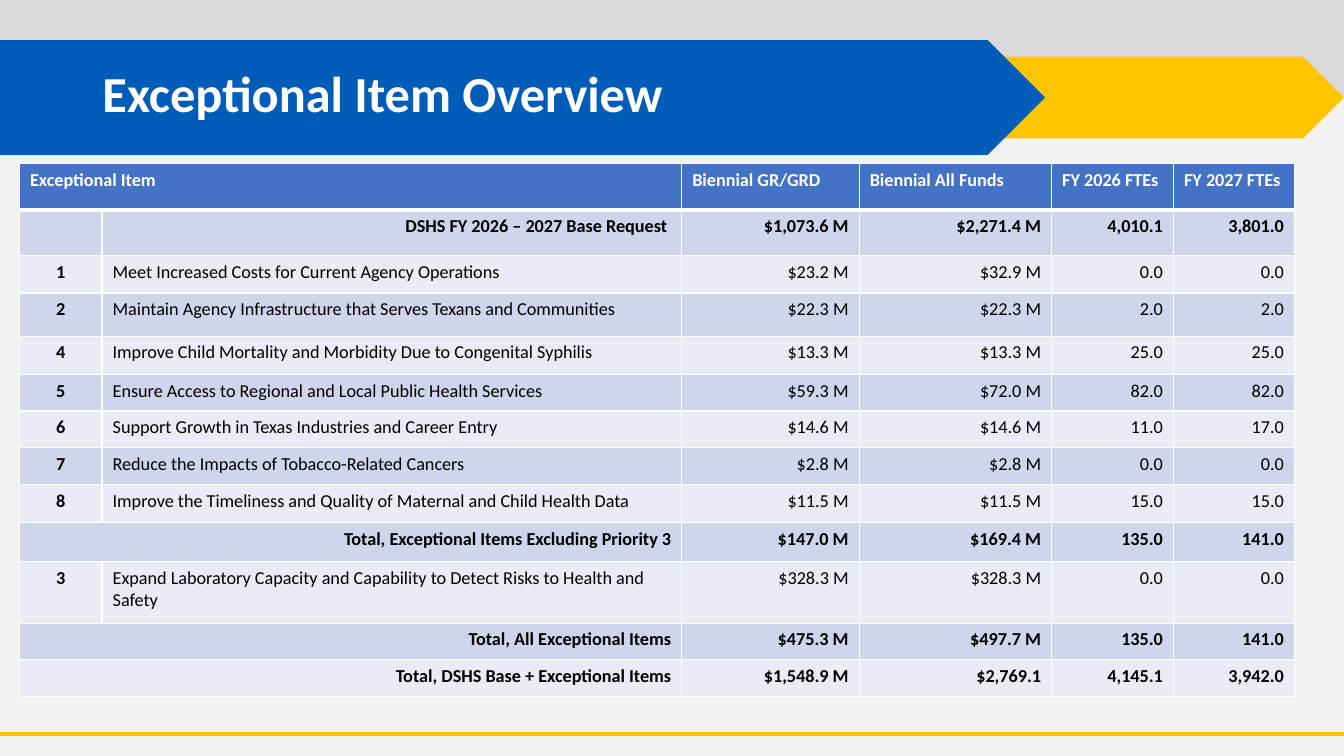
from lxml import etree
from pptx import Presentation
from pptx.dml.color import RGBColor
from pptx.enum.shapes import MSO_CONNECTOR, MSO_SHAPE
from pptx.enum.text import MSO_ANCHOR, MSO_AUTO_SIZE, PP_ALIGN
from pptx.oxml.ns import qn
from pptx.util import Pt

LEFT, CENTER, RIGHT = PP_ALIGN.LEFT, PP_ALIGN.CENTER, PP_ALIGN.RIGHT
MIDDLE = MSO_ANCHOR.MIDDLE
NO_AUTOFIT = MSO_AUTO_SIZE.NONE
RECTANGLE, ARROW_BAND = MSO_SHAPE.RECTANGLE, MSO_SHAPE.PENTAGON
STRAIGHT = MSO_CONNECTOR.STRAIGHT

WHITE = RGBColor(0xFF, 0xFF, 0xFF)
BLACK = RGBColor(0x00, 0x00, 0x00)
PAGE_GREY = RGBColor(0xF2, 0xF2, 0xF2)
BAND_GREY = RGBColor(0xD9, 0xD9, 0xD9)
YELLOW = RGBColor(0xFF, 0xC6, 0x00)
BLUE = RGBColor(0x00, 0x5C, 0xB9)
HEADER_BLUE = RGBColor(0x44, 0x72, 0xC4)
STRIPES = (RGBColor(0xCF, 0xD5, 0xEA), RGBColor(0xE9, 0xEB, 0xF5))

FONT = "Calibri"
SLIDE_WIDTH, SLIDE_HEIGHT = 960, 540
TITLE_ONLY = 5
THIN, THICK = 1, 3

COLUMN_WIDTHS = (59, 414, 126.8, 137.5, 87.1, 86.4)
ROW_HEIGHTS = (33, 33, 26.5, 31, 27.2, 26.2, 26.2, 26.2, 27.2, 28, 44, 26.2, 26.2)

HEADER = ("Exceptional Item", "", "Biennial GR/GRD", "Biennial All Funds",
          "FY 2026 FTEs", "FY 2027 FTEs")
BASE = ("", "DSHS FY 2026 – 2027 Base Request ", "$1,073.6 M", "$2,271.4 M",
        "4,010.1", "3,801.0")
ITEMS = (
    ("1", "Meet Increased Costs for Current Agency Operations",
     "$23.2 M", "$32.9 M", "0.0", "0.0"),
    ("2", "Maintain Agency Infrastructure that Serves Texans and Communities",
     "$22.3 M", "$22.3 M", "2.0", "2.0"),
    ("4", "Improve Child Mortality and Morbidity Due to Congenital Syphilis",
     "$13.3 M", "$13.3 M", "25.0", "25.0"),
    ("5", "Ensure Access to Regional and Local Public Health Services",
     "$59.3 M", "$72.0 M", "82.0", "82.0"),
    ("6", "Support Growth in Texas Industries and Career Entry",
     "$14.6 M", "$14.6 M", "11.0", "17.0"),
    ("7", "Reduce the Impacts of Tobacco-Related Cancers",
     "$2.8 M", "$2.8 M", "0.0", "0.0"),
    ("8", "Improve the Timeliness and Quality of Maternal and Child Health Data",
     "$11.5 M", "$11.5 M", "15.0", "15.0"),
)
SUBTOTAL = ("Total, Exceptional Items Excluding Priority 3", "",
            "$147.0 M", "$169.4 M", "135.0", "141.0")
LABORATORY = ("3", "Expand Laboratory Capacity and Capability to Detect Risks to "
              "Health and Safety", "$328.3 M", "$328.3 M", "0.0", "0.0")
ALL_ITEMS = ("Total, All Exceptional Items", "",
             "$475.3 M", "$497.7 M", "135.0", "141.0")
GRAND_TOTAL = ("Total, DSHS Base + Exceptional Items", "",
               "$1,548.9 M", "$2,769.1", "4,145.1", "3,942.0")
ROWS = (HEADER, BASE, *ITEMS, SUBTOTAL, LABORATORY, ALL_ITEMS, GRAND_TOTAL)
MERGED = (HEADER, SUBTOTAL, ALL_ITEMS, GRAND_TOTAL)
BOLD = (BASE, *MERGED)


def apply(target, settings):
    for name, value in settings.items():
        setattr(target, name, value)


def format_font(font, size, color, bold):
    apply(font, {"name": FONT, "size": Pt(size), "bold": bold})
    font.color.rgb = color


def add_band(slide, preset, color, *box):
    band = slide.shapes.add_shape(preset, *map(Pt, box))
    band.shadow.inherit = False
    band.fill.solid()
    band.fill.fore_color.rgb = color
    band.line.fill.background()


def add_footer_rule(slide, top):
    rule = slide.shapes.add_connector(STRAIGHT, 0, Pt(top), Pt(SLIDE_WIDTH), Pt(top))
    rule.line.color.rgb = YELLOW
    rule.line.width = Pt(3)
    etree.SubElement(rule.element.spPr, qn("a:effectLst"))


def place_title(slide, wording):
    title = slide.shapes.title
    slide.shapes.element.append(title.element)
    apply(title, {"left": Pt(66), "top": Pt(16.5), "width": Pt(828), "height": Pt(104.5)})
    apply(title.text_frame, {"text": wording, "word_wrap": True,
                             "auto_size": NO_AUTOFIT, "vertical_anchor": MIDDLE})
    heading = title.text_frame.paragraphs[0]
    apply(heading, {"alignment": LEFT, "line_spacing": 0.9})
    format_font(heading.font, 36, WHITE, True)


def set_borders(cell, widths):
    properties = cell._tc.get_or_add_tcPr()
    for side, width in widths.items():
        border = etree.SubElement(properties, qn(f"a:ln{side}"), w=str(Pt(width)))
        fill = etree.SubElement(border, qn("a:solidFill"))
        etree.SubElement(fill, qn("a:srgbClr"), val=str(WHITE))


def cell_alignment(row, column):
    if row is HEADER:
        return LEFT
    if column > 1 or row in BOLD:
        return RIGHT
    return CENTER if column == 0 else LEFT


def fill_cell(cell, row, row_index, column):
    set_borders(cell, {"L": THIN, "R": THIN,
                       "T": THICK if row_index == 1 else THIN,
                       "B": THICK if row_index == 0 else THIN})
    cell.fill.solid()
    cell.fill.fore_color.rgb = HEADER_BLUE if row is HEADER else STRIPES[(row_index - 1) % 2]
    apply(cell, {"margin_left": Pt(7.6), "margin_right": Pt(7.6),
                 "margin_top": Pt(3.8), "margin_bottom": Pt(3.8)})
    if row[column]:
        cell.text = row[column]
        entry = cell.text_frame.paragraphs[0]
        entry.alignment = cell_alignment(row, column)
        format_font(entry.font, 13, WHITE if row is HEADER else BLACK,
                    row in BOLD or column == 0)


def add_funding_table(slide, left, top):
    table = slide.shapes.add_table(
        len(ROWS), len(COLUMN_WIDTHS), Pt(left), Pt(top),
        Pt(sum(COLUMN_WIDTHS)), Pt(sum(ROW_HEIGHTS))).table
    for column, width in zip(table.columns, COLUMN_WIDTHS):
        column.width = Pt(width)
    for row_index, (row, height) in enumerate(zip(ROWS, ROW_HEIGHTS)):
        table.rows[row_index].height = Pt(height)
        for column in range(len(row)):
            fill_cell(table.cell(row_index, column), row, row_index, column)
        if row in MERGED:
            table.cell(row_index, 0).merge(table.cell(row_index, 1))


def main():
    presentation = Presentation()
    apply(presentation, {"slide_width": Pt(SLIDE_WIDTH), "slide_height": Pt(SLIDE_HEIGHT)})
    slide = presentation.slides.add_slide(presentation.slide_layouts[TITLE_ONLY])
    slide.background.fill.solid()
    slide.background.fill.fore_color.rgb = PAGE_GREY
    add_band(slide, RECTANGLE, BAND_GREY, 0, -2, SLIDE_WIDTH, 70.5)
    add_band(slide, ARROW_BAND, YELLOW, 510, 40.5, 450, 58.3)
    add_band(slide, ARROW_BAND, BLUE, 0, 28.6, 746.5, 82)
    add_footer_rule(slide, 524.2)
    place_title(slide, "Exceptional Item Overview")
    add_funding_table(slide, 13.9, 116.8)
    presentation.save("out.pptx")


if __name__ == "__main__":
    main()
